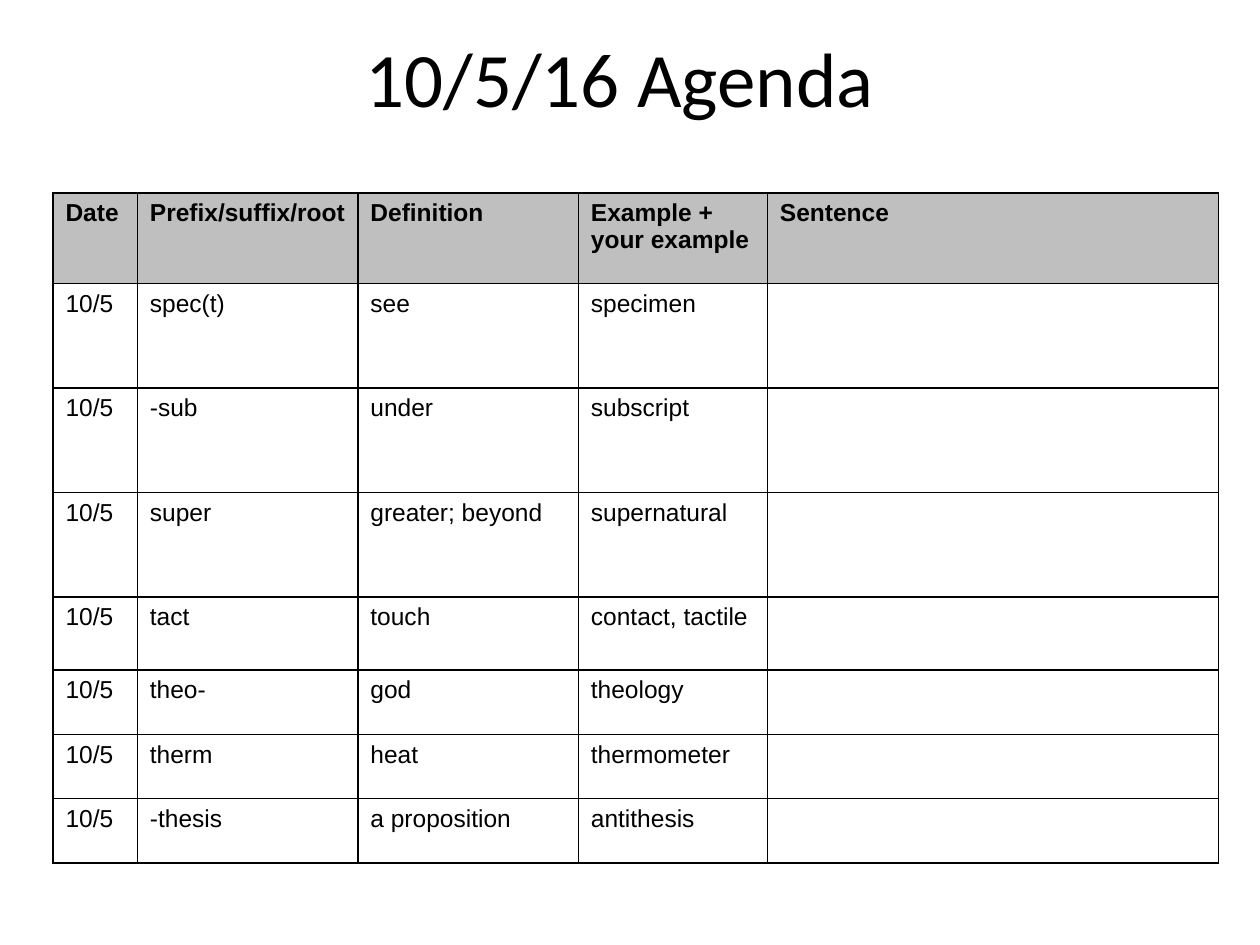
from dataclasses import dataclass

from lxml import etree
from pptx import Presentation
from pptx import util as u
from pptx.dml.color import RGBColor
from pptx.enum import text
from pptx.oxml import ns


@dataclass(frozen=True)
class Theme:
    """Colours, fonts and type sizes of the slide."""
    ink: str = "000000"
    header: str = "BFBFBF"
    title_font: str = "Calibri"
    body_font: str = "Arial"
    title_size: int = 44
    body_size: int = 14
    border: float = 1


THEME = Theme()
COLUMNS = (0.67, 1.75, 1.75, 1.5, 3.58)
ROWS = (0.72, 0.83, 0.83, 0.83, 0.58, 0.51, 0.51, 0.51)
HEADINGS = ("Date", "Prefix/suffix/root", "Definition", "Example + your example", "Sentence")
DATE = "10/5"
WORD_PARTS = (
    ("spec(t)", "see", "specimen"),
    ("-sub", "under", "subscript"),
    ("super", "greater; beyond", "supernatural"),
    ("tact", "touch", "contact, tactile"),
    ("theo-", "god", "theology"),
    ("therm", "heat", "thermometer"),
    ("-thesis", "a proposition", "antithesis"),
)


def style_font(p, name, size, bold=False):
    """Set the font of a whole paragraph."""
    p.font.name = name
    p.font.size = u.Pt(size)
    p.font.bold = bold
    p.font.color.rgb = RGBColor.from_string(THEME.ink)


def add_title(s, title):
    """Add the centred slide title."""
    box = s.shapes.add_textbox(u.Inches(0.67), u.Inches(0.3), u.Inches(8.5), u.Inches(0.61))
    tf = box.text_frame
    tf.word_wrap = True
    tf.vertical_anchor = text.MSO_ANCHOR.MIDDLE
    p = tf.paragraphs[0]
    p.text = title
    p.alignment = text.PP_ALIGN.CENTER
    style_font(p, THEME.title_font, THEME.title_size)


def add_borders(cell):
    """Draw a solid line on all four sides of a cell."""
    props = cell._tc.get_or_add_tcPr()
    for side in ("lnL", "lnR", "lnT", "lnB"):
        line = etree.SubElement(props, ns.qn(f"a:{side}"), w=str(u.Pt(THEME.border)))
        fill = etree.SubElement(line, ns.qn("a:solidFill"))
        etree.SubElement(fill, ns.qn("a:srgbClr"), val=THEME.ink)


def fill_cell(cell, content, is_header):
    """Write and style one table cell."""
    add_borders(cell)
    if is_header:
        cell.fill.solid()
        cell.fill.fore_color.rgb = RGBColor.from_string(THEME.header)
    else:
        cell.fill.background()
    p = cell.text_frame.paragraphs[0]
    p.text = content
    style_font(p, THEME.body_font, THEME.body_size, is_header)


def add_word_table(s):
    """Add the table of word parts."""
    records = [HEADINGS] + [(DATE, *parts, "") for parts in WORD_PARTS]
    frame = s.shapes.add_table(
        len(ROWS), len(COLUMNS), u.Inches(0.42), u.Inches(1.53),
        u.Inches(sum(COLUMNS)), u.Inches(sum(ROWS)))
    table = frame.table
    table.horz_banding = False
    for column, width in zip(table.columns, COLUMNS):
        column.width = u.Inches(width)
    for i, (row, height) in enumerate(zip(table.rows, ROWS)):
        row.height = u.Inches(height)
        for cell, content in zip(row.cells, records[i]):
            fill_cell(cell, content, i == 0)


def main():
    """Build and save the agenda slide."""
    prs = Presentation()
    prs.slide_width, prs.slide_height = u.Inches(10), u.Inches(7.5)
    s = prs.slides.add_slide(prs.slide_layouts[6])
    add_title(s, "10/5/16 Agenda")
    add_word_table(s)
    prs.save("out.pptx")


if __name__ == "__main__":
    main()
